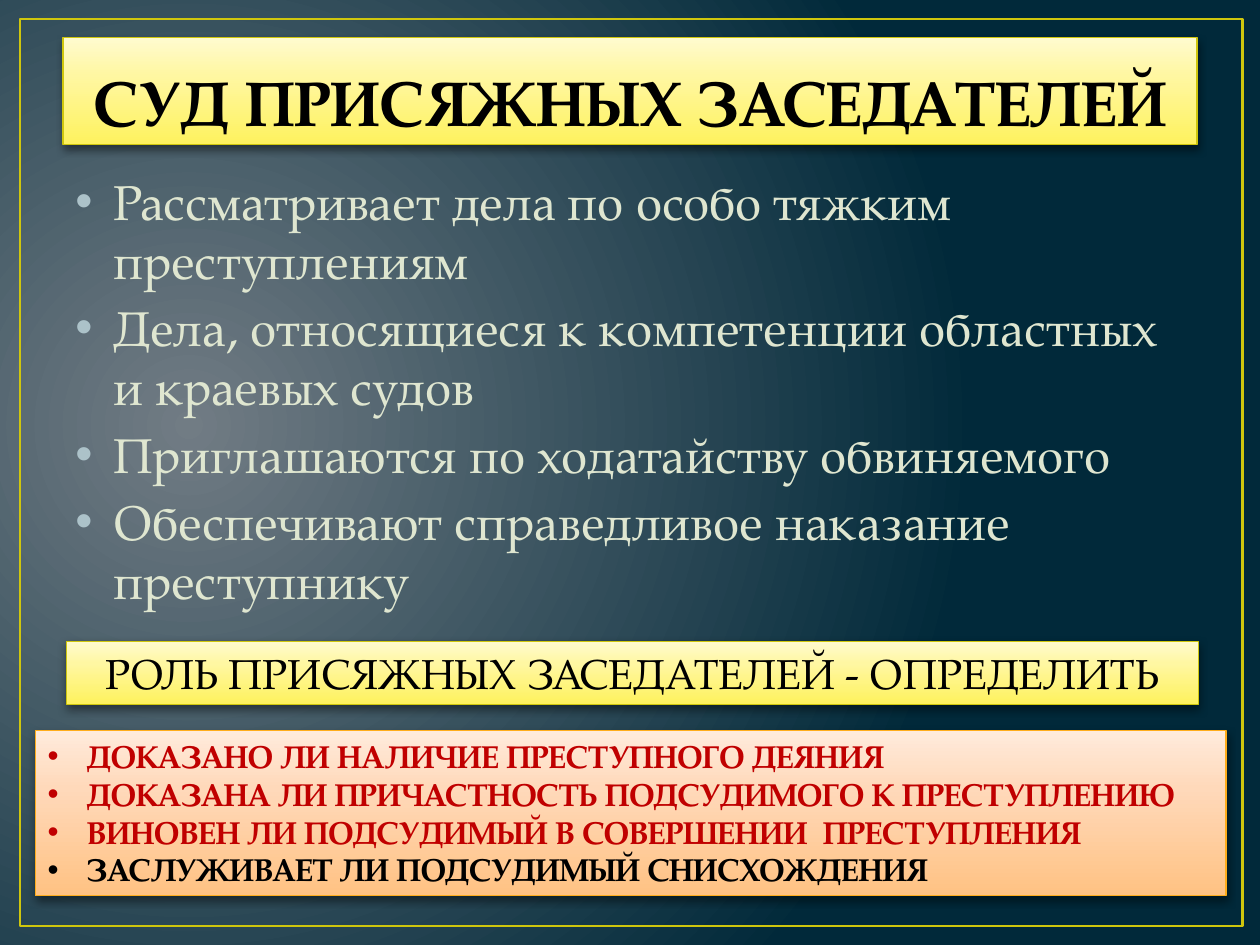
from dataclasses import dataclass

from lxml import etree
from pptx import Presentation
from pptx.dml.color import RGBColor
from pptx.enum.shapes import MSO_SHAPE
from pptx.enum.text import MSO_ANCHOR, PP_ALIGN
from pptx.oxml import parse_xml
from pptx.oxml.ns import nsdecls, qn
from pptx.util import Inches, Pt

RECTANGLE = MSO_SHAPE.RECTANGLE
LEFT, CENTER = PP_ALIGN.LEFT, PP_ALIGN.CENTER
TOP, MIDDLE, BOTTOM = MSO_ANCHOR.TOP, MSO_ANCHOR.MIDDLE, MSO_ANCHOR.BOTTOM


@dataclass(frozen=True)
class Theme:
    font: str = "TeX Gyre Pagella"
    backdrop: tuple = ((0, "717C84"), (100, "01293A"))
    yellow: tuple = ((0, "FEF25E"), (65, "FFF7A2"), (100, "FFFBCF"))
    orange: tuple = ((0, "FFC283"), (65, "FFD9BA"), (100, "FFEBDC"))
    yellow_edge: str = "CFC60D"
    orange_edge: str = "FFAD1C"
    black: str = "000000"
    red: str = "C00000"
    pale: str = "DFE6D0"
    bullet: str = "ACC2C9"
    title_size: int = 36
    body_size: int = 28
    role_size: int = 24
    question_size: int = 18


THEME = Theme()

TITLE = "СУД ПРИСЯЖНЫХ ЗАСЕДАТЕЛЕЙ"
FEATURES = [
    "Рассматривает дела по особо тяжким преступлениям",
    "Дела, относящиеся к компетенции областных и краевых судов",
    "Приглашаются по ходатайству обвиняемого",
    "Обеспечивают справедливое наказание преступнику",
]
ROLE = "РОЛЬ ПРИСЯЖНЫХ ЗАСЕДАТЕЛЕЙ - ОПРЕДЕЛИТЬ"
GUILT_QUESTIONS = [
    "ДОКАЗАНО ЛИ НАЛИЧИЕ ПРЕСТУПНОГО ДЕЯНИЯ",
    "ДОКАЗАНА ЛИ ПРИЧАСТНОСТЬ ПОДСУДИМОГО К ПРЕСТУПЛЕНИЮ",
    "ВИНОВЕН ЛИ ПОДСУДИМЫЙ В СОВЕРШЕНИИ  ПРЕСТУПЛЕНИЯ",
]
LENIENCY_QUESTION = "ЗАСЛУЖИВАЕТ ЛИ ПОДСУДИМЫЙ СНИСХОЖДЕНИЯ"


def set_gradient(gradient, stops, direction):
    for child in list(gradient):
        gradient.remove(child)
    stop_list = etree.SubElement(gradient, qn("a:gsLst"))
    for position, color in stops:
        stop = etree.SubElement(stop_list, qn("a:gs"), pos=str(position * 1000))
        etree.SubElement(stop, qn("a:srgbClr"), val=color)
    gradient.append(parse_xml(direction))


def paint_background(slide):
    slide.background.fill.gradient()
    glow = (
        f'<a:path {nsdecls("a")} path="circle">'
        '<a:fillToRect l="15000" t="50000" r="85000" b="60000"/></a:path>'
    )
    gradient = slide.element.find(".//" + qn("a:gradFill"))
    set_gradient(gradient, THEME.backdrop, glow)


def add_rectangle(slide, box, edge, width):
    rectangle = slide.shapes.add_shape(RECTANGLE, *map(Inches, box))
    rectangle.shadow.inherit = False
    rectangle.fill.background()
    rectangle.line.color.rgb = RGBColor.from_string(edge)
    rectangle.line.width = Pt(width)
    return rectangle


def add_panel(slide, box, stops, edge):
    panel = add_rectangle(slide, box, edge, 0.75)
    panel.fill.gradient()
    properties = panel.element.spPr
    upward = f'<a:lin {nsdecls("a")} ang="16200000" scaled="0"/>'
    set_gradient(properties.find(qn("a:gradFill")), stops, upward)
    properties.find(qn("a:effectLst")).append(parse_xml(
        f'<a:outerShdw {nsdecls("a")} blurRad="{Pt(5)}" dist="{Pt(2)}" '
        'dir="5400000" rotWithShape="0"><a:srgbClr val="000000">'
        '<a:alpha val="43000"/></a:srgbClr></a:outerShdw>'
    ))
    return panel.text_frame


def prepare_frame(frame, anchor):
    frame.word_wrap = True
    frame.vertical_anchor = anchor
    return frame


def set_bullet(paragraph, color, indent):
    properties = paragraph._p.get_or_add_pPr()
    properties.set("marL", str(Inches(indent)))
    properties.set("indent", str(-Inches(indent)))
    bullet_color = etree.SubElement(properties, qn("a:buClr"))
    etree.SubElement(bullet_color, qn("a:srgbClr"), val=color)
    etree.SubElement(properties, qn("a:buFont"), typeface="Arial")
    etree.SubElement(properties, qn("a:buChar"), char="•")


def write(frame, text, *, size, color, bold=False, align=LEFT, before=0,
          bullet=None, indent=0, spacing=0):
    first = frame.paragraphs[0]
    paragraph = frame.add_paragraph() if first.runs else first
    paragraph.alignment = align
    paragraph.space_before = Pt(before)
    if bullet:
        set_bullet(paragraph, bullet, indent)
    run = paragraph.add_run()
    run.text = text
    run.font.name = THEME.font
    run.font.size = Pt(size)
    run.font.bold = bold
    run.font.color.rgb = RGBColor.from_string(color)
    if spacing:
        run.font._element.set("spc", str(int(spacing * 100)))


def main():
    presentation = Presentation()
    presentation.slide_width = Inches(10)
    presentation.slide_height = Inches(7.5)
    slide = presentation.slides.add_slide(presentation.slide_layouts[6])

    paint_background(slide)
    add_rectangle(slide, (0.16, 0.15, 9.7, 7.2), THEME.yellow_edge, 1.5)

    title = add_panel(slide, (0.5, 0.3, 9, 0.85), THEME.yellow, THEME.yellow_edge)
    write(prepare_frame(title, BOTTOM), TITLE, size=THEME.title_size,
          color=THEME.black, bold=True, align=CENTER, spacing=0.5)

    features_box = slide.shapes.add_textbox(*map(Inches, (0.5, 1.31, 9, 3.78)))
    features = prepare_frame(features_box.text_frame, TOP)
    for feature in FEATURES:
        write(features, feature, size=THEME.body_size, color=THEME.pale,
              before=5, bullet=THEME.bullet, indent=0.3)

    role = add_panel(slide, (0.53, 5.09, 8.98, 0.5), THEME.yellow, THEME.yellow_edge)
    write(prepare_frame(role, MIDDLE), ROLE, size=THEME.role_size,
          color=THEME.black, align=CENTER)

    questions = add_panel(slide, (0.28, 5.8, 9.45, 1.31), THEME.orange,
                          THEME.orange_edge)
    prepare_frame(questions, TOP)
    colored_questions = [(question, THEME.red) for question in GUILT_QUESTIONS]
    colored_questions.append((LENIENCY_QUESTION, THEME.black))
    for question, color in colored_questions:
        write(questions, question, size=THEME.question_size, color=color,
              bold=True, bullet=color, indent=0.31)

    presentation.save("out.pptx")


if __name__ == "__main__":
    main()
